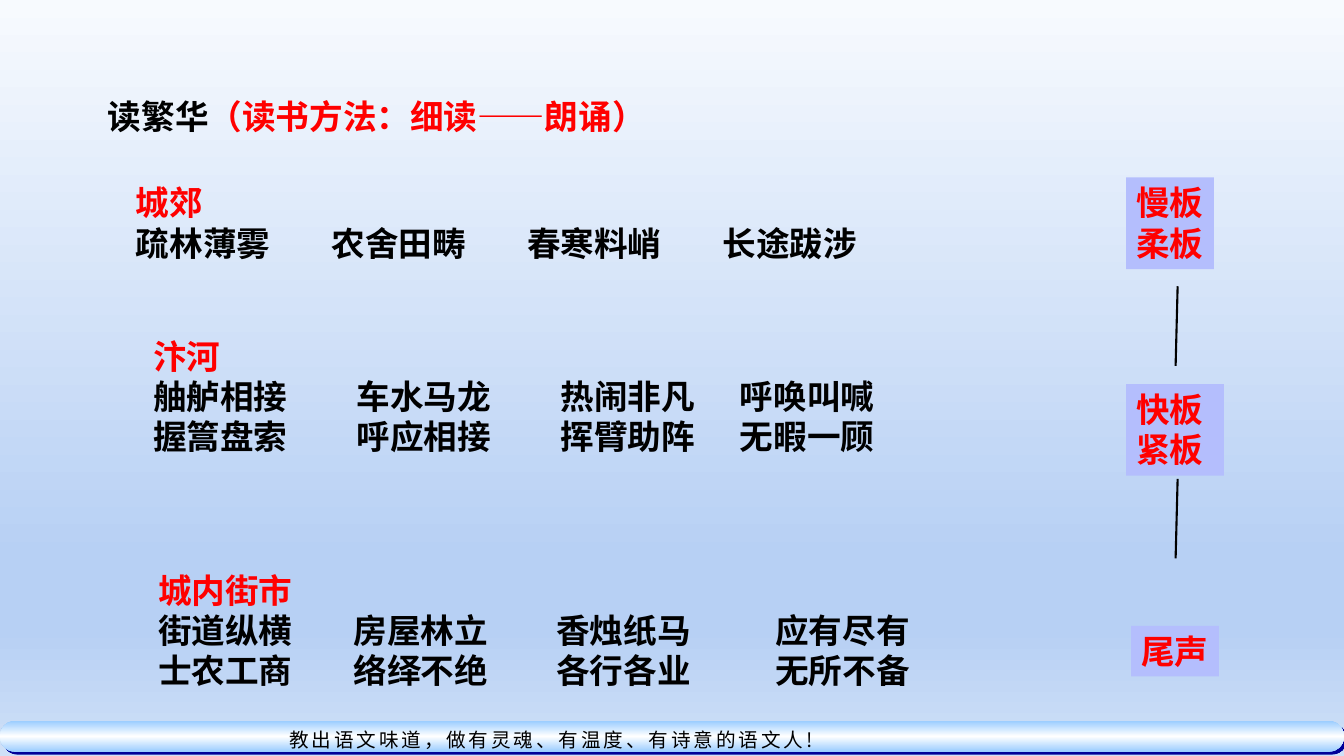
from lxml.etree import SubElement
from pptx import Presentation
from pptx.dml.color import RGBColor
from pptx.enum.shapes import MSO_CONNECTOR, MSO_SHAPE
from pptx.enum.text import MSO_ANCHOR, PP_ALIGN
from pptx.oxml.ns import qn
from pptx.util import Inches, Pt

THEME = {
    "ink": "000000", "accent": "FF0000", "tempo": "B4BEFD", "bar_shadow": "000099",
    "background": [(0, "F7FAFE"), (74, "B7D0F4"), (83, "B7D0F4"), (100, "CFE0F7")],
    "bar": [(0, "99CCFF"), (50, "FFFFFF"), (100, "99CCFF")],
    "font": "Arial", "motto_font": "Noto Sans CJK JP",
    "text_size": 24, "motto_size": 14,
}

TITLE = [("读繁华", "ink"), ("（读书方法：细读——朗诵）", "accent")]
MOTTO = "教出语文味道，做有灵魂、有温度、有诗意的语文人!"

# Box, column offsets from the text edge, heading, rows of phrases
SCENES = [
    ((1.25, 1.76, 7.75, 0.91), (1.94, 3.88, 5.82), "城郊",
     [("疏林薄雾", "农舍田畴", "春寒料峭", "长途跋涉")]),
    ((1.42, 3.28, 7.75, 1.31), (2.02, 4.04, 5.82), "汴河",
     [("舳舻相接", "车水马龙", "热闹非凡", "呼唤叫喊"),
      ("握篙盘索", "呼应相接", "挥臂助阵", "无暇一顾")]),
    ((1.47, 5.6, 8.12, 1.31), (1.94, 3.95, 6.12), "城内街市",
     [("街道纵横", "房屋林立", "香烛纸马", "应有尽有"),
      ("士农工商", "络绎不绝", "各行各业", "无所不备")]),
]
TEMPOS = [
    ((11.17, 1.76, 0.87, 0.91), ["慢板", "柔板"]),
    ((11.17, 3.81, 0.97, 0.91), ["快板", "紧板"]),
    ((11.22, 6.21, 0.87, 0.5), ["尾声"]),
]
LINK_TOPS = [2.84, 4.75]
LINK_X, LINK_HEIGHT = (11.68, 11.66), 0.79


def inches(box):
    return [Inches(length) for length in box]


def set_gradient(fill, owner, stops):
    """Fill from top to bottom; owner is the element that holds the fill."""
    fill.gradient()
    fill.gradient_angle = 270
    stop_list = owner.xpath(".//a:gsLst")[0]
    for old in list(stop_list):
        stop_list.remove(old)
    for percent, color in stops:
        stop = SubElement(stop_list, qn("a:gs"), pos=str(percent * 1000))
        SubElement(stop, qn("a:srgbClr"), val=color)


def add_run(paragraph, words, color, font="font", size="text_size", bold=True):
    run = paragraph.add_run()
    run.text = words
    formats = {"name": THEME[font], "size": Pt(THEME[size]), "bold": bold}
    for attribute, value in formats.items():
        setattr(run.font, attribute, value)
    run.font.color.rgb = RGBColor.from_string(THEME[color])
    return run


def prepare_frame(shape):
    frame = shape.text_frame
    formats = {"word_wrap": True, "vertical_anchor": MSO_ANCHOR.TOP,
               "margin_left": Inches(0.1), "margin_right": Inches(0.1),
               "margin_top": Inches(0.05), "margin_bottom": Inches(0.05)}
    for attribute, value in formats.items():
        setattr(frame, attribute, value)
    return frame


def write_lines(shape, lines, columns=()):
    """Write (words, colour) lines, with a tab stop at each column offset."""
    frame = prepare_frame(shape)
    for index, (words, color) in enumerate(lines):
        paragraph = frame.add_paragraph() if index else frame.paragraphs[0]
        if "\t" in words:
            tabs = SubElement(paragraph._p.get_or_add_pPr(), qn("a:tabLst"))
            for offset in columns:
                SubElement(tabs, qn("a:tab"), pos=str(Inches(offset)), algn="l")
        paragraph.alignment = PP_ALIGN.LEFT
        add_run(paragraph, words, color)


def add_footer(slide):
    bar = slide.shapes.add_shape(MSO_SHAPE.ROUNDED_RECTANGLE,
                                 *inches((0, 7.15, 13.33, 0.31)))
    bar.adjustments[0] = 0.5
    set_gradient(bar.fill, bar.element, THEME["bar"])
    bar.line.fill.background()
    bar.shadow.inherit = False
    effects = bar.element.spPr.find(qn("a:effectLst"))
    shadow = SubElement(effects, qn("a:outerShdw"), dist=str(Pt(2.8)),
                        dir="2700000", algn="ctr", rotWithShape="0")
    SubElement(shadow, qn("a:srgbClr"), val=THEME["bar_shadow"])

    motto = slide.shapes.add_textbox(*inches((2.71, 7.15, 5.51, 0.38)))
    paragraph = prepare_frame(motto).paragraphs[0]
    paragraph.alignment = PP_ALIGN.CENTER
    paragraph.line_spacing = 1.1
    run = add_run(paragraph, MOTTO, "ink", "motto_font", "motto_size", False)
    properties = run.font._element
    properties.set("spc", "200")
    SubElement(properties, qn("a:ea"), typeface=THEME["motto_font"])


def add_title(slide):
    title = slide.shapes.title
    title.left, title.top, title.width, title.height = inches((0.97, 0.9, 6.64, 0.5))
    paragraph = prepare_frame(title).paragraphs[0]
    paragraph.alignment = PP_ALIGN.LEFT
    for words, color in TITLE:
        add_run(paragraph, words, color)


def add_scenes(slide):
    for box, columns, heading, rows in SCENES:
        lines = [(heading, "accent")] + [("\t".join(row), "ink") for row in rows]
        write_lines(slide.shapes.add_textbox(*inches(box)), lines, columns)


def add_tempos(slide):
    for box, names in TEMPOS:
        tempo = slide.shapes.add_shape(MSO_SHAPE.RECTANGLE, *inches(box))
        tempo.shadow.inherit = False
        tempo.fill.solid()
        tempo.fill.fore_color.rgb = RGBColor.from_string(THEME["tempo"])
        tempo.line.fill.background()
        write_lines(tempo, [(name, "accent") for name in names])
    for top in LINK_TOPS:
        ends = (LINK_X[0], top, LINK_X[1], top + LINK_HEIGHT)
        link = slide.shapes.add_connector(MSO_CONNECTOR.STRAIGHT, *inches(ends))
        link.line.color.rgb = RGBColor.from_string(THEME["ink"])
        link.line.width = Pt(1.5)
        SubElement(link.element.spPr, qn("a:effectLst"))


def main():
    deck = Presentation()
    deck.slide_width, deck.slide_height = inches((13.33, 7.5))
    slide = deck.slides.add_slide(deck.slide_layouts.get_by_name("Title Only"))
    set_gradient(slide.background.fill, slide.element, THEME["background"])
    add_footer(slide)
    add_title(slide)
    add_scenes(slide)
    add_tempos(slide)
    deck.save("out.pptx")


if __name__ == "__main__":
    main()
